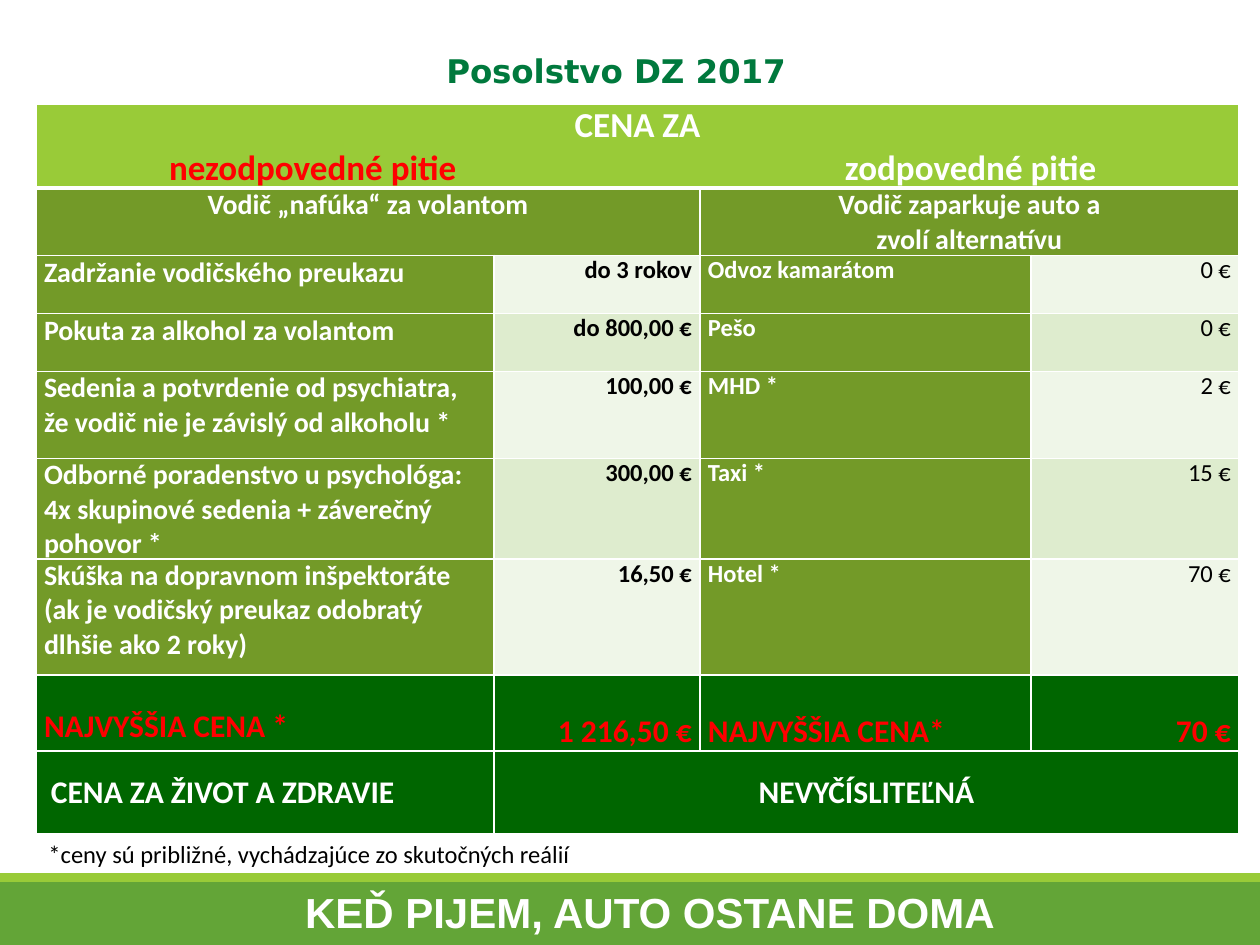
import pptx
import pptx.util
import pptx.dml.color
import pptx.enum.shapes
import pptx.enum.text
import pptx.oxml
import pptx.oxml.ns

ALIGN = pptx.enum.text.PP_ALIGN
ANCHOR = pptx.enum.text.MSO_ANCHOR
EMU_PER_PX = 914400 / 126

WHITE, BLACK, RED = "FFFFFF", "000000", "FF0000"
LIME, OLIVE, FOREST = "99CB38", "739A28", "006600"
BANDS = ["EFF6E8", "DEECCE"]


def px(length):
    return pptx.util.Emu(round(length * EMU_PER_PX))


def rgb(value):
    return pptx.dml.color.RGBColor.from_string(value)


class SlideBuilder:
    def __init__(self, presentation, font="Calibri"):
        self.slide = presentation.slides.add_slide(presentation.slide_layouts[5])
        self.font = font

    def format_run(self, run, size, color, bold=True, font=None):
        run.font.name = font or self.font
        run.font.size = pptx.util.Pt(size)
        run.font.bold = bold
        run.font.color.rgb = rgb(color)

    def format_frame(self, frame, align, *style):
        for paragraph in frame.paragraphs:
            paragraph.alignment = align
            for run in paragraph.runs:
                self.format_run(run, *style)

    def title(self, text, left, top, width, height):
        shape = self.slide.shapes.title
        shape.left, shape.top = px(left), px(top)
        shape.width, shape.height = px(width), px(height)
        frame = shape.text_frame
        frame.text = text
        frame.auto_size = pptx.enum.text.MSO_AUTO_SIZE.NONE
        frame.vertical_anchor = ANCHOR.TOP
        frame.margin_left = frame.margin_right = 0
        frame.margin_top = frame.margin_bottom = 0
        self.format_frame(frame, ALIGN.CENTER, 32, "00793D", True, "DejaVu Sans")
        paragraph = frame.paragraphs[0]
        paragraph.line_spacing = pptx.util.Pt(33.6)
        paragraph.space_before = pptx.util.Pt(1.7)
        paragraph.runs[0]._r.get_or_add_rPr().set("baseline", "3000")

    def bar(self, left, top, width, height, color):
        shape = self.slide.shapes.add_shape(
            pptx.enum.shapes.MSO_SHAPE.RECTANGLE,
            px(left), px(top), px(width), px(height))
        shape.shadow.inherit = False
        shape.fill.solid()
        shape.fill.fore_color.rgb = rgb(color)
        shape.line.fill.background()

    def text(self, text, left, top, width, height, align, *style):
        shape = self.slide.shapes.add_textbox(px(left), px(top), px(width), px(height))
        shape.text_frame.word_wrap = True
        shape.text_frame.text = text
        self.format_frame(shape.text_frame, align, *style)

    def table(self, left, top, columns, rows):
        table = self.slide.shapes.add_table(
            len(rows), len(columns), px(left), px(top),
            px(sum(columns)), px(sum(rows))).table
        for column, width in zip(table.columns, columns):
            column.width = px(width)
        for row, height in zip(table.rows, rows):
            row.height = px(height)
        for cell in table.iter_cells():
            self.borders(cell)
        return table

    def borders(self, cell, **widths):
        properties = cell._tc.get_or_add_tcPr()
        for side in "LRTB":
            width = pptx.util.Pt(widths.get(side, 1))
            tag = pptx.oxml.ns.qn(f"a:ln{side}")
            for line in properties.findall(tag):
                line.set("w", str(width))
                break
            else:
                properties.append(pptx.oxml.parse_xml(
                    f'<a:ln{side} {pptx.oxml.ns.nsdecls("a")} w="{width}">'
                    f'<a:solidFill><a:srgbClr val="{WHITE}"/></a:solidFill></a:ln{side}>'))

    def cell(self, cell, text, fill, align, size, color=WHITE, bold=True,
             anchor=ANCHOR.TOP, indent=8, bottom=0):
        cell.margin_left, cell.margin_right = px(indent), px(8)
        cell.margin_top, cell.margin_bottom = 0, px(bottom)
        cell.vertical_anchor = anchor
        cell.fill.solid()
        cell.fill.fore_color.rgb = rgb(fill)
        cell.text_frame.text = text
        self.format_frame(cell.text_frame, align, size, color, bold)

    def tabbed_line(self, cell, parts, size):
        paragraph = cell.text_frame.add_paragraph()
        paragraph.alignment = ALIGN.LEFT
        properties = paragraph._p.get_or_add_pPr()
        stops = "".join(f'<a:tab pos="{px(position)}" algn="l"/>' for position, _, _ in parts)
        properties.append(pptx.oxml.parse_xml(
            f'<a:tabLst {pptx.oxml.ns.nsdecls("a")}>{stops}</a:tabLst>'))
        for _, text, color in parts:
            run = paragraph.add_run()
            run.text = "\t" + text
            self.format_run(run, size, color)


PRICES = [
    ("Zadržanie vodičského preukazu", "do 3 rokov", "Odvoz kamarátom", "0 €"),
    ("Pokuta za alkohol za volantom", "do 800,00 €", "Pešo", "0 €"),
    ("Sedenia a potvrdenie od psychiatra, že vodič nie je závislý od alkoholu *",
     "100,00 €", "MHD *", "2 €"),
    ("Odborné poradenstvo u psychológa: 4x skupinové sedenia + záverečný pohovor *",
     "300,00 €", "Taxi *", "15 €"),
    ("Skúška na dopravnom inšpektoráte (ak je vodičský preukaz odobratý dlhšie ako 2 roky)",
     "16,50 €", "Hotel *", "70 €"),
]
TOTALS = ["NAJVYŠŠIA CENA *", "1 216,50 €", "NAJVYŠŠIA CENA*", "70 €"]


def fill_price_table(builder):
    table = builder.table(36, 104, [458, 206, 331, 208],
                          [83, 66, 58, 58, 87, 100, 116, 76, 83])
    for row, first, last in [(0, 0, 3), (1, 0, 1), (1, 2, 3), (8, 1, 3)]:
        table.cell(row, first).merge(table.cell(row, last))
    for column in range(4):
        builder.borders(table.cell(0, column), B=3)
        builder.borders(table.cell(1, column), T=3)

    heading = table.cell(0, 0)
    builder.cell(heading, "CENA ZA", LIME, ALIGN.CENTER, 20)
    builder.tabbed_line(heading, [(125, "nezodpovedné pitie", RED),
                                  (801, "zodpovedné pitie", WHITE)], 20)
    builder.cell(table.cell(1, 0), "Vodič „nafúka“ za volantom", OLIVE, ALIGN.CENTER, 16)
    builder.cell(table.cell(1, 2), "Vodič zaparkuje auto a\vzvolí alternatívu",
                 OLIVE, ALIGN.CENTER, 16)

    for index, (penalty, penalty_price, option, option_price) in enumerate(PRICES):
        row, band = index + 2, BANDS[index % 2]
        builder.cell(table.cell(row, 0), penalty, OLIVE, ALIGN.LEFT, 16)
        builder.cell(table.cell(row, 1), penalty_price, band, ALIGN.RIGHT, 14, BLACK)
        builder.cell(table.cell(row, 2), option, OLIVE, ALIGN.LEFT, 14)
        builder.cell(table.cell(row, 3), option_price, band, ALIGN.RIGHT, 14, BLACK, False)

    for column, text in enumerate(TOTALS):
        builder.cell(table.cell(7, column), text, FOREST,
                     ALIGN.RIGHT if column % 2 else ALIGN.LEFT, 18, RED,
                     anchor=ANCHOR.BOTTOM, bottom=0 if column else 5)
    builder.cell(table.cell(8, 0), "CENA ZA ŽIVOT A ZDRAVIE", FOREST, ALIGN.LEFT, 18,
                 anchor=ANCHOR.MIDDLE, indent=15)
    builder.cell(table.cell(8, 1), "NEVYČÍSLITEĽNÁ", FOREST, ALIGN.CENTER, 18,
                 anchor=ANCHOR.MIDDLE)


def main():
    presentation = pptx.Presentation()
    presentation.slide_width, presentation.slide_height = px(1260), px(945)
    builder = SlideBuilder(presentation)
    builder.bar(0, 882, 1260, 63, "63A537")
    builder.bar(0, 873, 1260, 9, LIME)
    builder.text("KEĎ PIJEM, AUTO OSTANE DOMA", 194, 880, 912, 59,
                 ALIGN.CENTER, 24, WHITE, True, "Arial")
    builder.title("Posolstvo DZ 2017", 105, 38, 1022, 59)
    builder.text("*ceny sú približné, vychádzajúce zo skutočných reálií", 36, 833, 1041, 43,
                 ALIGN.LEFT, 14, BLACK, False)
    fill_price_table(builder)
    presentation.save("out.pptx")


if __name__ == "__main__":
    main()
